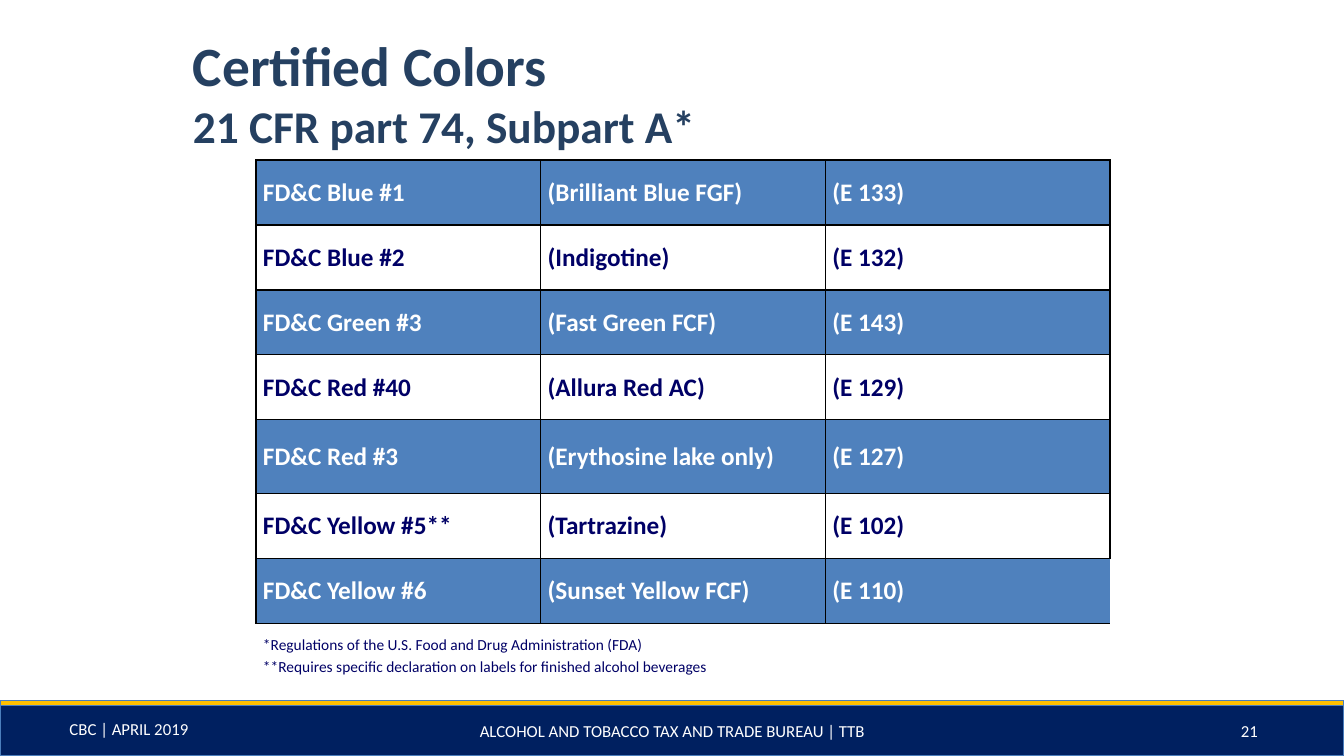
"""Builds the Certified Colors slide with its table of color additives."""
from lxml import etree
from pptx import Presentation, util as u
from pptx.dml.color import RGBColor
from pptx.enum import shapes, text
from pptx.oxml import ns

PX = 914400 / 100.8
THEME = {
    "font": "Calibri", "title": "254061", "navy": "002060", "gold": "FFC000",
    "outline": "4B7EBC", "band": "4F81BD", "ink": "000066", "white": "FFFFFF",
    "border": "000000", "title_pt": 39.6, "subtitle_pt": 32.4, "cell_pt": 18,
    "note_pt": 11, "footer_pt": 12,
}
LEFT, CENTER = text.PP_ALIGN.LEFT, text.PP_ALIGN.CENTER
JUSTIFY = text.PP_ALIGN.JUSTIFY


def px(n):
    return u.Emu(round(n * PX))


def add_run(p, words, size, color, bold=False):
    r = p.add_run()
    r.text = words
    fmt = {"name": THEME["font"], "size": u.Pt(THEME[size]), "bold": bold}
    for key, value in fmt.items():
        setattr(r.font, key, value)
    r.font.color.rgb = RGBColor.from_string(THEME[color])


prs = Presentation()
prs.slide_width, prs.slide_height = px(1344), px(756)
s = prs.slides.add_slide(prs.slide_layouts[6])

for top, height, color in [(701, 55, "navy"), (701, 5, "gold")]:
    sp = s.shapes.add_shape(shapes.MSO_SHAPE.RECTANGLE, 0, px(top), px(1344), px(height))
    sp.shadow.inherit = False
    sp.fill.solid()
    sp.fill.fore_color.rgb = RGBColor.from_string(THEME[color])
    sp.line.color.rgb = RGBColor.from_string(THEME["outline"])
    sp.line.width = u.Pt(0.75)

labels = [
    ((183, 50, 1093, 84), LEFT, "title",
     [("Certified Colors", "title_pt"), ("21 CFR part 74, Subpart A*", "subtitle_pt")]),
    ((0, 714, 258, 30), CENTER, "white", [("CBC | APRIL 2019", "footer_pt")]),
    ((359, 711, 627, 40), CENTER, "white",
     [("ALCOHOL AND TOBACCO TAX AND TRADE BUREAU | TTB", "footer_pt")]),
    ((1160, 711, 179, 40), CENTER, "white", [("21", "footer_pt")]),
]
for box, align, color, lines in labels:
    tf = s.shapes.add_textbox(*map(px, box)).text_frame
    tf.word_wrap = True
    tf.vertical_anchor = text.MSO_ANCHOR.MIDDLE
    p = tf.paragraphs[0]
    p.alignment = align
    for i, (words, size) in enumerate(lines):
        if i:
            p.add_line_break()
        add_run(p, words, size, color, bold=color == "title")

colors = [
    ("FD&C Blue #1", "(Brilliant Blue FGF)", "(E 133)"),
    ("FD&C Blue #2", "(Indigotine)", "(E 132)"),
    ("FD&C Green #3", "(Fast Green FCF)", "(E 143)"),
    ("FD&C Red #40", "(Allura Red AC)", "(E 129)"),
    ("FD&C Red #3", "(Erythosine lake only)", "(E 127)"),
    ("FD&C Yellow #5**", "(Tartrazine)", "(E 102)"),
    ("FD&C Yellow #6", "(Sunset Yellow FCF)", "(E 110)"),
]
notes = [
    "*Regulations of the U.S. Food and Drug Administration (FDA)",
    "**Requires specific declaration on labels for finished alcohol beverages",
]
row_heights = [65, 65, 65, 65, 74, 65, 65, 65]
note_row = len(colors)
table = s.shapes.add_table(len(row_heights), 3, px(256), px(160), px(854),
                           px(sum(row_heights))).table
table.first_row = table.horz_banding = False
for row, height in zip(table.rows, row_heights):
    row.height = px(height)
table.cell(note_row, 0).merge(table.cell(note_row, 2))

cell_format = {
    "margin_left": px(7), "margin_right": px(7), "margin_top": px(4),
    "margin_bottom": px(4), "vertical_anchor": text.MSO_ANCHOR.MIDDLE,
}
for i, row in enumerate(table.rows):
    for j, cell in enumerate(row.cells):
        for key, value in cell_format.items():
            setattr(cell, key, value)
        banded = i < note_row and i % 2 == 0
        if banded:
            cell.fill.solid()
            cell.fill.fore_color.rgb = RGBColor.from_string(THEME["band"])
        else:
            cell.fill.background()
        p = cell.text_frame.paragraphs[0]
        p.alignment = JUSTIFY
        if i < note_row:
            add_run(p, colors[i][j], "cell_pt", "white" if banded else "ink", bold=True)
            sides = "LTB" if (i, j) == (note_row - 1, 2) else "LRTB"
        else:
            sides = "T"
        tc_pr = cell._tc.get_or_add_tcPr()
        for k, side in enumerate("LRTB"):
            ln = etree.Element(ns.qn(f"a:ln{side}"), w=str(u.Pt(1)))
            if side in sides:
                fill = etree.SubElement(ln, ns.qn("a:solidFill"))
                etree.SubElement(fill, ns.qn("a:srgbClr"), val=THEME["border"])
            else:
                etree.SubElement(ln, ns.qn("a:noFill"))
            tc_pr.insert(k, ln)

tf = table.cell(note_row, 0).text_frame
for i, note in enumerate(notes):
    p = tf.add_paragraph() if i else tf.paragraphs[0]
    p.alignment = JUSTIFY
    if i:
        p.space_before = u.Pt(2.2)
    add_run(p, note, "note_pt", "ink")

prs.save("out.pptx")
